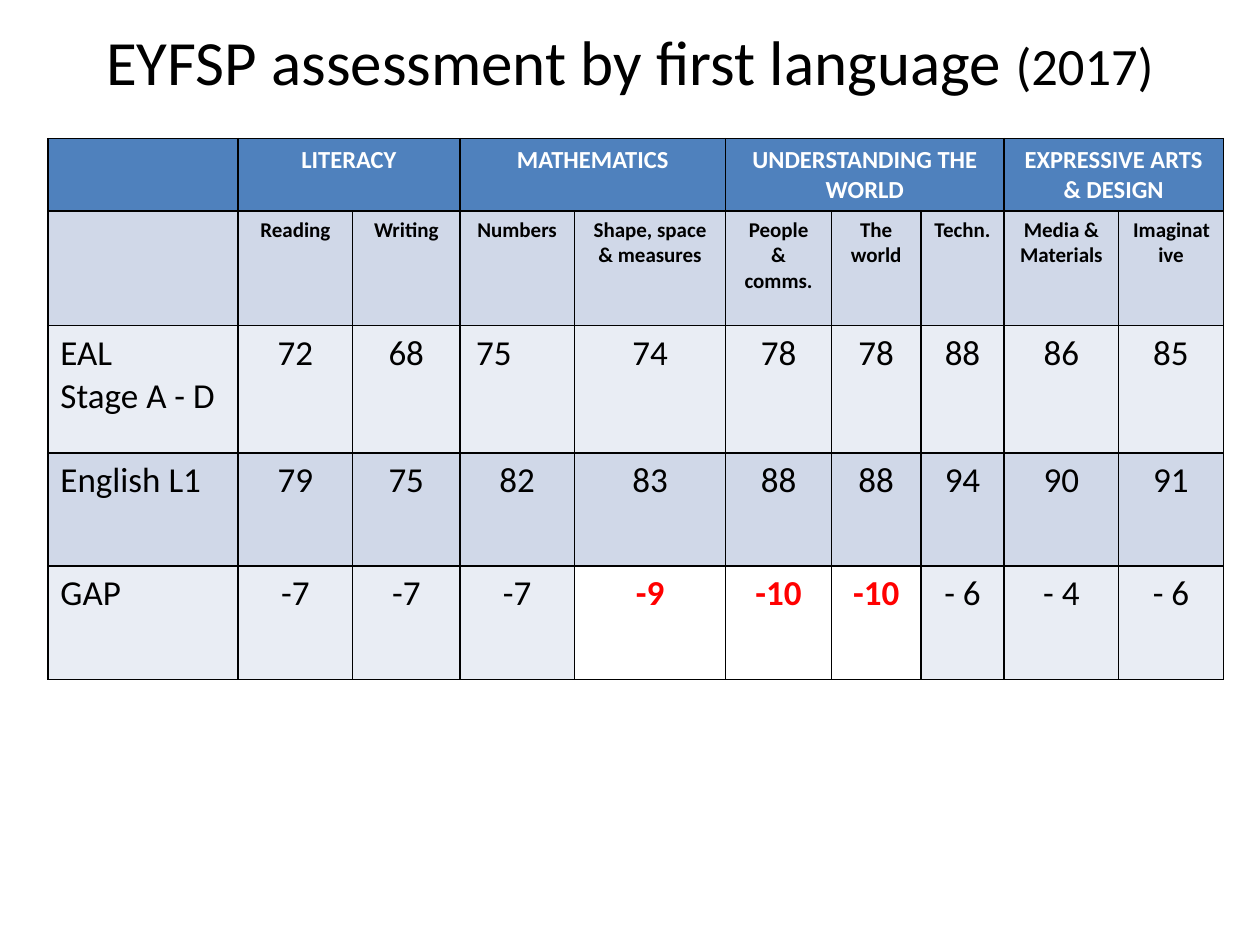
from dataclasses import dataclass

from lxml.etree import SubElement
from pptx import Presentation
from pptx.dml.color import RGBColor as RGB
from pptx.enum.text import MSO_ANCHOR as Anchor, PP_ALIGN as Align
from pptx.oxml.ns import qn
from pptx.util import Inches, Pt


@dataclass(frozen=True)
class Theme:
    font: str = "Calibri"
    ink: str = "000000"
    white: str = "FFFFFF"
    alert: str = "FF0000"
    header: str = "4F81BD"
    band_dark: str = "D0D8E8"
    band_light: str = "E9EDF4"
    title_size: int = 36
    year_size: int = 30
    area_size: int = 14
    subject_size: int = 12
    score_size: int = 20
    border_width: float = 1


# Areas of learning, each with its subjects
AREAS = {
    "LITERACY": ["Reading", "Writing"],
    "MATHEMATICS": ["Numbers", "Shape, space & measures"],
    "UNDERSTANDING THE WORLD": ["People\v& comms.", "The world", "Techn."],
    "EXPRESSIVE ARTS & DESIGN": ["Media & Materials", "Imaginative"],
}
SCORES = [
    ("EAL\nStage A - D", "72 68 75 74 78 78 88 86 85".split()),
    ("English L1", "79 75 82 83 88 88 94 90 91".split()),
    ("GAP", ["-7", "-7", "-7", "-9", "-10", "-10", "- 6", "- 4", "- 6"]),
]
WIDE_GAPS = {"-9", "-10"}
COLUMN_WIDTHS = [1.51, 0.91, 0.85, 0.91, 1.2, 0.84, 0.71, 0.66, 0.91, 0.83]
ROW_HEIGHTS = [0.57, 0.91, 1.01, 0.9, 0.9]


def write(paragraph, text, *, font, size, color, bold=False, align=Align.CENTER):
    """Append formatted text to a paragraph; a vertical tab breaks the line."""
    paragraph.alignment = align
    for index, line in enumerate(text.split("\v")):
        if index:
            paragraph.add_line_break()
        run = paragraph.add_run()
        run.text = line
        run.font.name = font
        run.font.size = Pt(size)
        run.font.bold = bold
        run.font.color.rgb = RGB.from_string(color)


class SlideBuilder:
    def __init__(self, slide, theme):
        self.slide = slide
        self.theme = theme

    def title(self, parts, left, top, width, height):
        heading = self.slide.shapes.title
        heading.left, heading.top = Inches(left), Inches(top)
        heading.width, heading.height = Inches(width), Inches(height)
        heading.text_frame.vertical_anchor = Anchor.MIDDLE
        for text, size in parts:
            write(heading.text_frame.paragraphs[0], text, size=size,
                  font=self.theme.font, color=self.theme.ink)

    def table(self, left, top, column_widths, row_heights):
        grid = self.slide.shapes.add_table(
            len(row_heights), len(column_widths), Inches(left), Inches(top),
            Inches(sum(column_widths)), Inches(sum(row_heights))).table
        for column, width in zip(grid.columns, column_widths):
            column.width = Inches(width)
        for row, height in zip(grid.rows, row_heights):
            row.height = Inches(height)
        for cell in grid.iter_cells():
            self.border(cell)
        return grid

    def border(self, cell):
        properties = cell._tc.get_or_add_tcPr()
        for side in ("a:lnL", "a:lnR", "a:lnT", "a:lnB"):
            line = SubElement(properties, qn(side), w=str(Pt(self.theme.border_width)))
            fill = SubElement(line, qn("a:solidFill"))
            SubElement(fill, qn("a:srgbClr"), val=self.theme.ink)

    def cell(self, cell, fill, text="", **style):
        cell.fill.solid()
        cell.fill.fore_color.rgb = RGB.from_string(fill)
        if not text:
            return
        for index, line in enumerate(text.split("\n")):
            frame = cell.text_frame
            paragraph = frame.add_paragraph() if index else frame.paragraphs[0]
            write(paragraph, line, font=self.theme.font, **style)


def main():
    theme = Theme()
    deck = Presentation()
    deck.slide_width, deck.slide_height = Inches(10), Inches(7.5)
    builder = SlideBuilder(deck.slides.add_slide(deck.slide_layouts[5]), theme)

    builder.title([("EYFSP assessment by first language ", theme.title_size),
                   ("(2017)", theme.year_size)], 0.5, -0.15, 9, 1.25)
    results = builder.table(0.38, 1.1, COLUMN_WIDTHS, ROW_HEIGHTS)

    # Header rows: areas span their subjects
    area_style = dict(size=theme.area_size, color=theme.white, bold=True)
    subject_style = dict(size=theme.subject_size, color=theme.ink, bold=True)
    builder.cell(results.cell(0, 0), theme.header)
    builder.cell(results.cell(1, 0), theme.band_dark)
    column = 1
    for area, subjects in AREAS.items():
        area_cell = results.cell(0, column)
        area_cell.merge(results.cell(0, column + len(subjects) - 1))
        builder.cell(area_cell, theme.header, area, **area_style)
        for subject in subjects:
            builder.cell(results.cell(1, column), theme.band_dark, subject, **subject_style)
            column += 1

    # Score rows: banded, with the widest gaps in red on white
    score_style = dict(size=theme.score_size, color=theme.ink)
    alert_style = dict(size=theme.score_size, color=theme.alert, bold=True)
    for row, (group, scores) in enumerate(SCORES, start=2):
        band = theme.band_dark if row % 2 else theme.band_light
        builder.cell(results.cell(row, 0), band, group, align=Align.LEFT, **score_style)
        for column, score in enumerate(scores, start=1):
            wide = score in WIDE_GAPS
            builder.cell(results.cell(row, column), theme.white if wide else band, score,
                         **(alert_style if wide else score_style))

    # The EAL score for Numbers sits at the left of its cell
    eal_numbers = results.cell(2, 3)
    eal_numbers.margin_left = Inches(0.13)
    eal_numbers.text_frame.paragraphs[0].alignment = Align.LEFT

    deck.save("out.pptx")


if __name__ == "__main__":
    main()
